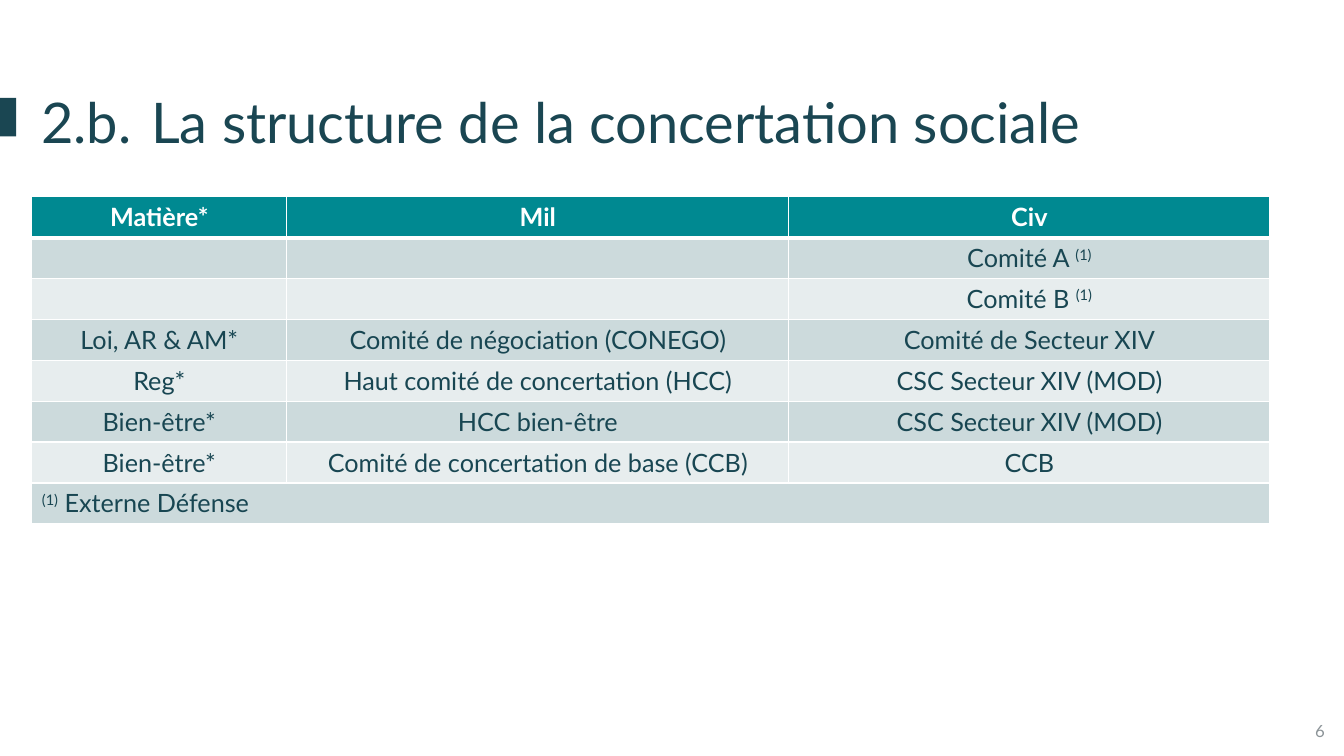
from lxml import etree
from pptx import Presentation
from pptx.dml.color import RGBColor
from pptx.enum import shapes, text
from pptx.oxml import ns
from pptx.util import Pt

TITLE = "2.b.\tLa structure de la concertation sociale"
PAGE = "6"
NOTE = "(1)"  # set as superscript wherever it occurs
ROWS = [
    ("Matière*", "Mil", "Civ"),
    ("", "", "Comité A (1)"),
    ("", "", "Comité B (1)"),
    ("Loi, AR & AM*", "Comité de négociation (CONEGO)", "Comité de Secteur XIV"),
    ("Reg*", "Haut comité de concertation (HCC)", "CSC Secteur XIV (MOD)"),
    ("Bien-être*", "HCC bien-être", "CSC Secteur XIV (MOD)"),
    ("Bien-être*", "Comité de concertation de base (CCB)", "CCB"),
    ("(1) Externe Défense", "", ""),
]
COL_WIDTHS = (182.2, 358.6, 343.7)
ROW_HEIGHT = 29.2

FONT = "Lato"
WHITE = RGBColor(0xFF, 0xFF, 0xFF)
DARK = RGBColor(0x1A, 0x46, 0x52)
INK = RGBColor(0x18, 0x46, 0x52)
TEAL = RGBColor(0x00, 0x89, 0x91)
GREY = RGBColor(0x8C, 0x94, 0x98)
BANDS = (RGBColor(0xE7, 0xED, 0xEE), RGBColor(0xCC, 0xDA, 0xDC))


def add_run(p, content, size, color, bold=False):
    r = p.add_run()
    r.text = content
    for name, value in {"name": FONT, "size": Pt(size), "bold": bold}.items():
        setattr(r.font, name, value)
    r.font.color.rgb = color
    return r


def add_borders(cell, widths):
    """Draw white borders; widths in points are keyed by side: L, R, T, B."""
    tcPr = cell._tc.get_or_add_tcPr()
    for side, width in widths.items():
        ln = etree.SubElement(tcPr, ns.qn(f"a:ln{side}"), w=str(Pt(width)))
        fill = etree.SubElement(ln, ns.qn("a:solidFill"))
        etree.SubElement(fill, ns.qn("a:srgbClr"), val=str(WHITE))


def fill_cell(cell, content, row):
    head, last = row == 0, row == len(ROWS) - 1
    add_borders(cell, {"L": 1, "R": 1, "T": 3 if row == 1 else 1, "B": 3 if head else 1})
    cell.fill.solid()
    cell.fill.fore_color.rgb = TEAL if head else BANDS[row % 2]
    p = cell.text_frame.paragraphs[0]
    p.alignment = text.PP_ALIGN.LEFT if last else text.PP_ALIGN.CENTER
    before, note, after = content.partition(NOTE)
    for part in filter(None, (before, note, after)):
        r = add_run(p, part, 18, WHITE if head else INK, head)
        if part == NOTE:
            r.font._element.set("baseline", "30000")


def main():
    prs = Presentation()
    prs.slide_width, prs.slide_height = Pt(960), Pt(540)
    slide = prs.slides.add_slide(prs.slide_layouts[5])

    marker = slide.shapes.add_shape(
        shapes.MSO_SHAPE.RECTANGLE, 0, Pt(70), Pt(11.5), Pt(27.5))
    marker.shadow.inherit = False
    marker.fill.solid()
    marker.fill.fore_color.rgb = DARK
    marker.line.fill.background()

    title = slide.shapes.title
    for name, value in zip(("left", "top", "width", "height"), (22.3, 59, 889.2, 55.4)):
        setattr(title, name, Pt(value))
    tf = title.text_frame
    tf.auto_size = text.MSO_AUTO_SIZE.NONE
    tf.vertical_anchor = text.MSO_ANCHOR.TOP
    p = tf.paragraphs[0]
    p.alignment = text.PP_ALIGN.LEFT
    pPr = p._p.get_or_add_pPr()
    pPr.set("marL", str(Pt(42.5)))
    pPr.set("indent", str(Pt(-42.5)))
    add_run(p, TITLE, 40, DARK)

    table = slide.shapes.add_table(
        len(ROWS), len(COL_WIDTHS), Pt(22.7), Pt(140.6),
        Pt(sum(COL_WIDTHS)), Pt(ROW_HEIGHT * len(ROWS))).table
    for column, width in zip(table.columns, COL_WIDTHS):
        column.width = Pt(width)
    for i, row in enumerate(ROWS):
        table.rows[i].height = Pt(ROW_HEIGHT)
        for j, content in enumerate(row):
            fill_cell(table.cell(i, j), content, i)
    end = len(ROWS) - 1
    table.cell(end, 0).merge(table.cell(end, len(COL_WIDTHS) - 1))

    number = slide.shapes.add_textbox(Pt(737.5), Pt(507.5), Pt(216), Pt(28.8))
    tf = number.text_frame
    tf.word_wrap = True
    tf.vertical_anchor = text.MSO_ANCHOR.MIDDLE
    p = tf.paragraphs[0]
    p.alignment = text.PP_ALIGN.RIGHT
    add_run(p, PAGE, 12, GREY)

    prs.save("out.pptx")


if __name__ == "__main__":
    main()
